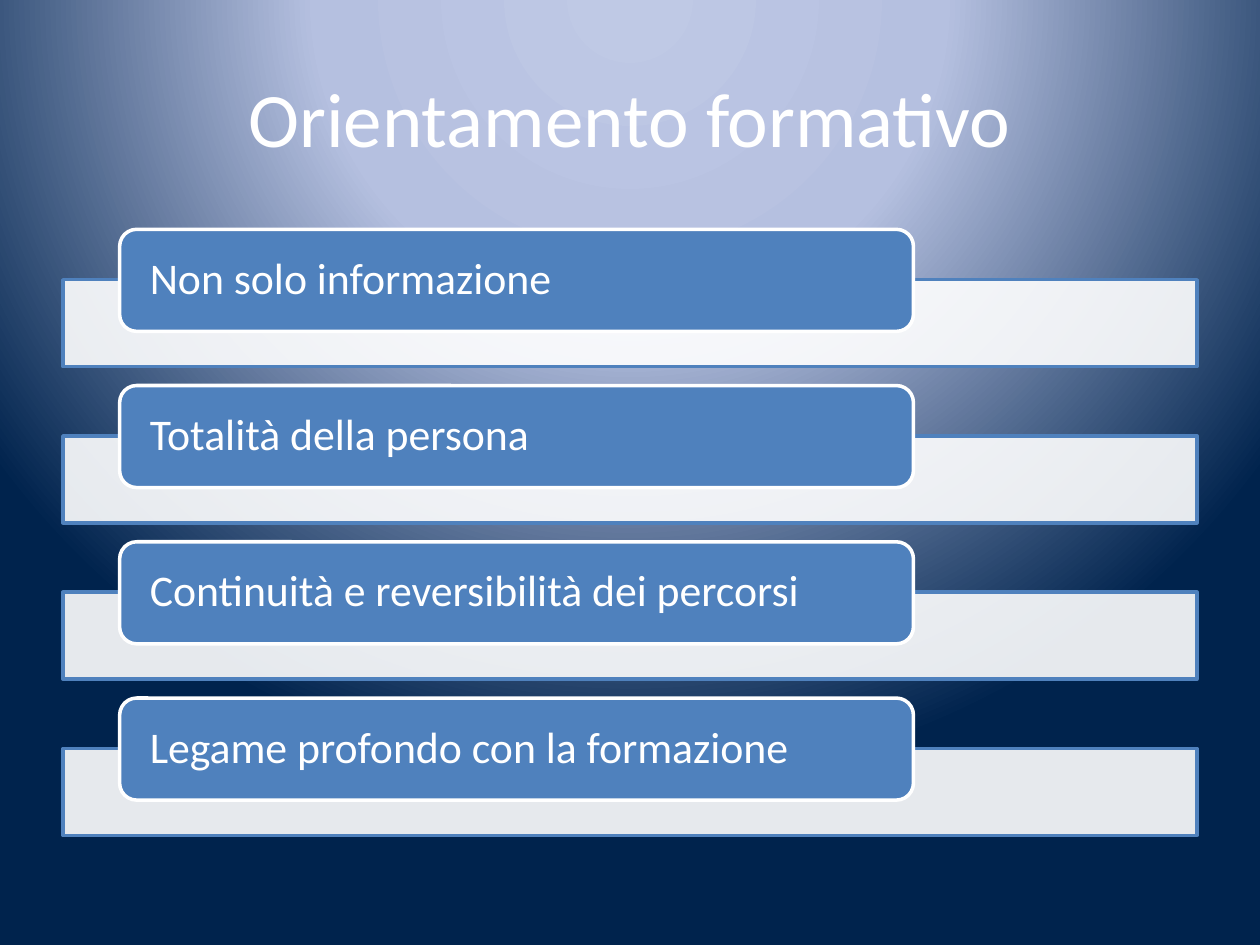
from dataclasses import dataclass

from lxml import etree
from pptx import Presentation
from pptx.dml.color import RGBColor
from pptx.enum.shapes import MSO_SHAPE
from pptx.enum.text import MSO_ANCHOR, PP_ALIGN
from pptx.oxml import parse_xml
from pptx.oxml.ns import qn
from pptx.util import Inches, Pt

RECTANGLE = MSO_SHAPE.RECTANGLE
ROUNDED = MSO_SHAPE.ROUNDED_RECTANGLE
MIDDLE = MSO_ANCHOR.MIDDLE
LEFT = PP_ALIGN.LEFT
CENTER = PP_ALIGN.CENTER
DRAWING_NS = "http://schemas.openxmlformats.org/drawingml/2006/main"


@dataclass(frozen=True)
class Theme:
    font: str = "Calibri"
    white: str = "FFFFFF"
    blue: str = "4F81BD"
    glow: tuple = ((0, "BFC9E5"), (40, "B5C0E0"), (100, "00234D"))
    title_size: int = 44
    label_size: int = 25
    line_width: int = 2
    band_opacity: int = 90


THEME = Theme()
TITLE = "Orientamento formativo"
PRINCIPLES = (
    "Non solo informazione",
    "Totalità della persona",
    "Continuità e reversibilità dei percorsi",
    "Legame profondo con la formazione",
)


def paint_background(page):
    page.background.fill.gradient()
    gradient = page.element.find(".//" + qn("a:gradFill"))
    stops = "".join(
        f'<a:gs pos="{position * 1000}"><a:srgbClr val="{color}"/></a:gs>'
        for position, color in THEME.glow
    )
    radial = parse_xml(
        f'<a:gradFill xmlns:a="{DRAWING_NS}" rotWithShape="1">'
        f"<a:gsLst>{stops}</a:gsLst>"
        '<a:path path="circle">'
        '<a:fillToRect l="50000" t="-80000" r="50000" b="180000"/>'
        "</a:path></a:gradFill>"
    )
    gradient.getparent().replace(gradient, radial)


def write_text(shape, text, size, alignment):
    frame = shape.text_frame
    frame.word_wrap = True
    frame.vertical_anchor = MIDDLE
    para = frame.paragraphs[0]
    para.text = text
    para.alignment = alignment
    para.font.name = THEME.font
    para.font.size = Pt(size)
    para.font.color.rgb = RGBColor.from_string(THEME.white)
    return frame, para


def add_title(page, left, top, width, height):
    box = page.shapes.add_textbox(left, top, width, height)
    write_text(box, TITLE, THEME.title_size, CENTER)


def add_block(page, kind, box, fill, line):
    block = page.shapes.add_shape(kind, *box)
    block.shadow.inherit = False
    block.fill.solid()
    block.fill.fore_color.rgb = RGBColor.from_string(fill)
    block.line.color.rgb = RGBColor.from_string(line)
    block.line.width = Pt(THEME.line_width)
    return block


def add_principle(page, text, left, top, width):
    band_box = (left, top + Inches(0.4), width, Inches(0.69))
    band = add_block(page, RECTANGLE, band_box, THEME.white, THEME.blue)
    color = band.fill._xPr.find(".//" + qn("a:srgbClr"))
    etree.SubElement(color, qn("a:alpha"), val=str(THEME.band_opacity * 1000))

    label_box = (left + Inches(0.45), top, int(width * 0.7), Inches(0.81))
    label = add_block(page, ROUNDED, label_box, THEME.blue, THEME.white)
    frame, para = write_text(label, text, THEME.label_size, LEFT)
    frame.margin_left = frame.margin_right = Inches(0.2)
    frame.margin_top = frame.margin_bottom = 0
    para.line_spacing = 0.9


def add_principles(page, left, top, width, pitch):
    for index, text in enumerate(PRINCIPLES):
        add_principle(page, text, left, top + index * pitch, width)


def main():
    deck = Presentation()
    deck.slide_width = Inches(10)
    deck.slide_height = Inches(7.5)
    page = deck.slides.add_slide(deck.slide_layouts[6])
    paint_background(page)
    add_title(page, Inches(0.5), Inches(0.3), Inches(9), Inches(1.25))
    add_principles(page, Inches(0.5), Inches(1.82), Inches(9), Inches(1.24))
    deck.save("out.pptx")


if __name__ == "__main__":
    main()
